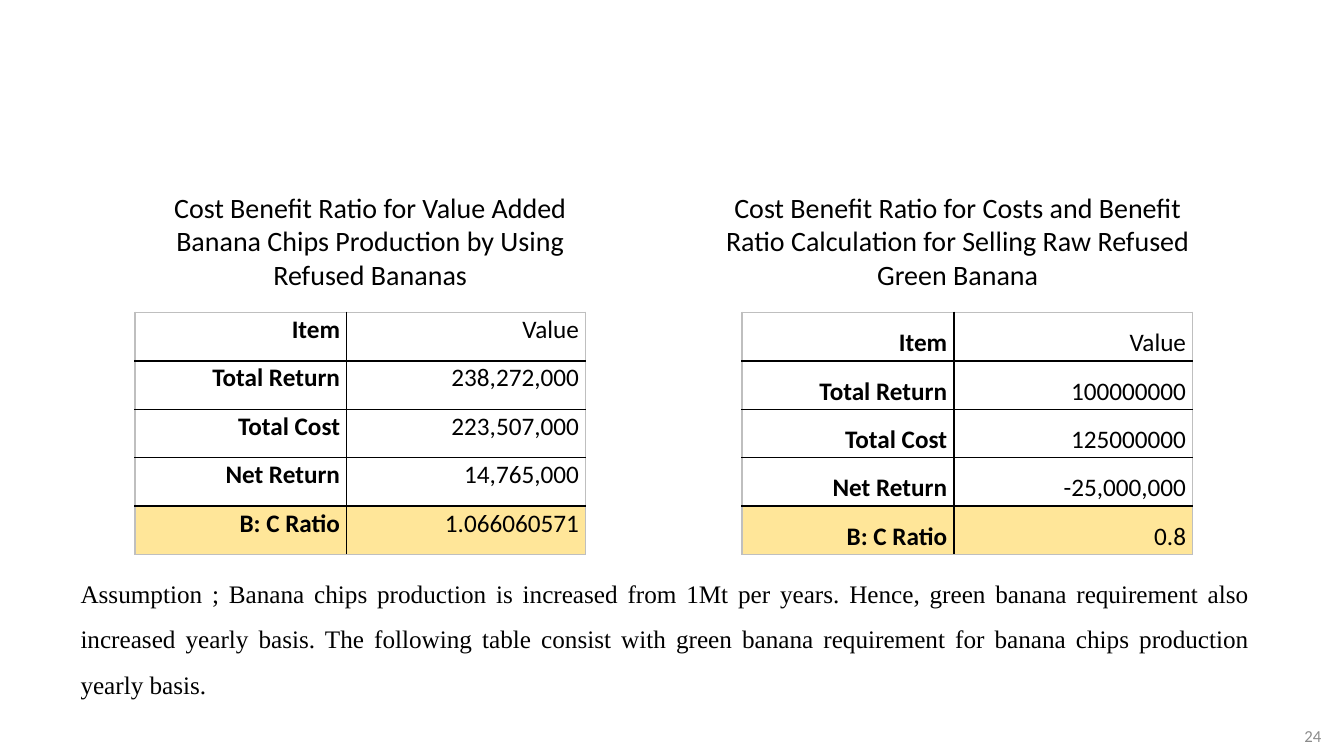
from lxml import etree
from pptx import Presentation, util as u
from pptx.dml.color import RGBColor
from pptx.enum import text
from pptx.oxml import ns

HUES = {"ink": "000000", "gold": "FFE699", "edge": "BFBFBF", "page": "8C8C8C"}
SANS, SERIF = "Calibri", "Times New Roman"
MID, RIGHT, JUST = text.PP_ALIGN.CENTER, text.PP_ALIGN.RIGHT, text.PP_ALIGN.JUSTIFY
TOP, CORE = text.MSO_ANCHOR.TOP, text.MSO_ANCHOR.MIDDLE


class Deck:
    def __init__(self):
        self.show = Presentation()
        self.show.slide_width, self.show.slide_height = u.Cm(33.87), u.Cm(19.05)
        self.slide = self.show.slides.add_slide(self.show.slide_layouts[6])

    def words(self, frame, line, size, face=SANS, hue="ink", bold=False, **form):
        para = frame.paragraphs[0]
        for key, val in form.items():
            setattr(para, key, val)
        run = para.add_run()
        run.text = line
        for key, val in {"size": u.Pt(size), "name": face, "bold": bold}.items():
            setattr(run.font, key, val)
        run.font.color.rgb = RGBColor.from_string(HUES[hue])

    def label(self, area, line, size, anchor=TOP, **form):
        frame = self.slide.shapes.add_textbox(*map(u.Cm, area)).text_frame
        frame.word_wrap = True
        frame.vertical_anchor = anchor
        self.words(frame, line, size, **form)

    def rule(self, cell, side, spot, hue, width):
        line = etree.Element(ns.qn("a:ln" + side), w=str(u.Pt(width)))
        fill = etree.SubElement(line, ns.qn("a:solidFill"))
        etree.SubElement(fill, ns.qn("a:srgbClr"), val=HUES[hue])
        cell._tc.get_or_add_tcPr().insert(spot, line)

    def table(self, area, rows, cols, gap):
        grid = self.slide.shapes.add_table(len(rows), len(cols), *map(u.Cm, area)).table
        grid.first_row = grid.horz_banding = False
        for col, width in zip(grid.columns, cols):
            col.width = u.Cm(width)
        last = len(rows) - 1
        pads = {"margin_left": 0.17, "margin_right": 0.17,
                "margin_top": 0, "margin_bottom": 0}
        for r, row in enumerate(rows):
            grid.rows[r].height = u.Cm(area[3] / len(rows))
            for c, line in enumerate(row):
                cell = grid.cell(r, c)
                for key, val in pads.items():
                    setattr(cell, key, u.Cm(val))
                if r == last:
                    cell.fill.solid()
                    cell.fill.fore_color.rgb = RGBColor.from_string(HUES["gold"])
                else:
                    cell.fill.background()
                outer = {"L": c == 0, "R": c == len(cols) - 1, "T": r == 0, "B": r == last}
                for spot, (side, edge) in enumerate(outer.items()):
                    head = (r, side) in ((0, "B"), (1, "T"))
                    self.rule(cell, side, spot, "edge" if edge else "ink", 1.5 if head else 1)
                self.words(cell.text_frame, line, 18, bold=c == 0,
                           alignment=RIGHT, line_spacing=gap)


ITEMS = ["Item", "Total Return", "Total Cost", "Net Return", "B: C Ratio"]
CHIPS = ["Value", "238,272,000", "223,507,000", "14,765,000", "1.066060571"]
GREEN = ["Value", "100000000", "125000000", "-25,000,000", "0.8"]
PANELS = [
    (3.4, 3.4, 11.86, 1.07, CHIPS,
     "Cost Benefit Ratio for Value Added Banana Chips Production by Using Refused Bananas"),
    (18.7, 17.8, 12.67, 1.5, GREEN,
     "Cost Benefit Ratio for Costs and Benefit Ratio Calculation for Selling Raw Refused "
     "Green Banana"),
]
NOTE = ("Assumption ; Banana chips production is increased from 1Mt per years. Hence, green "
        "banana requirement also increased yearly basis. The following table consist with "
        "green banana requirement for banana chips production yearly basis.")


def main():
    deck = Deck()
    for left, start, wide, gap, vals, title in PANELS:
        deck.label((start, 4.67, wide, 3), title, 20, alignment=MID)
        deck.table((left, 7.87, 11.36, 6.1), list(zip(ITEMS, vals)), (5.34, 6.02), gap)
    deck.label((1.78, 14.07, 29.97, 3.6), NOTE, 18, face=SERIF, alignment=JUST,
               line_spacing=1.5, space_after=u.Pt(8))
    deck.label((25.93, 18.03, 7.62, 1.02), "24", 12, CORE, hue="page", alignment=RIGHT)
    deck.show.save("out.pptx")


if __name__ == "__main__":
    main()
